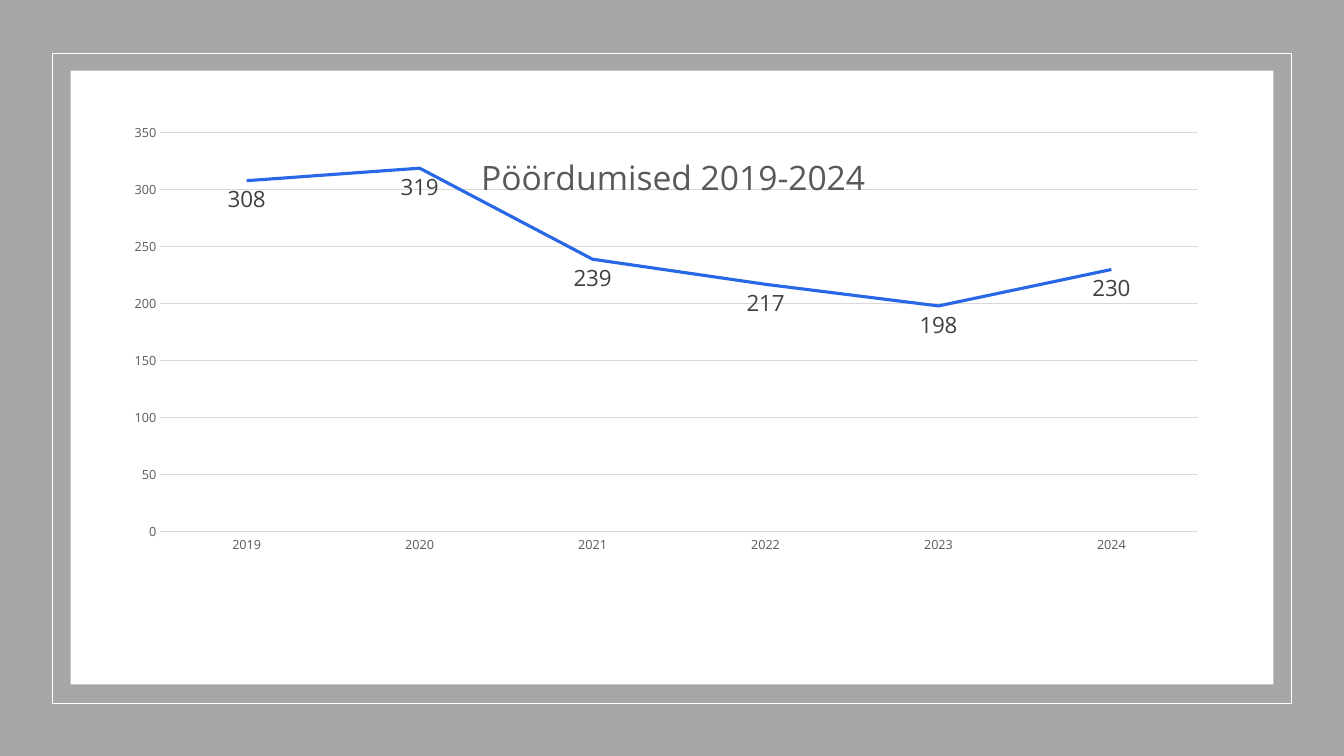
from lxml.etree import SubElement
from pptx import Presentation
from pptx.chart.data import CategoryChartData
from pptx.dml.color import RGBColor
from pptx.enum.chart import XL_CHART_TYPE as ChartType
from pptx.enum.chart import XL_LABEL_POSITION as LabelPosition
from pptx.enum.chart import XL_MARKER_STYLE as MarkerStyle
from pptx.enum.chart import XL_TICK_MARK as TickMark
from pptx.enum.shapes import MSO_SHAPE as Shape
from pptx.oxml.ns import qn
from pptx.util import Inches, Pt

WHITE = RGBColor(0xFF, 0xFF, 0xFF)
BACKDROP_GRAY = RGBColor(0xA6, 0xA6, 0xA6)
GRID_GRAY = RGBColor(0xD9, 0xD9, 0xD9)
TEXT_GRAY = RGBColor(0x59, 0x59, 0x59)
LABEL_GRAY = RGBColor(0x40, 0x40, 0x40)
TREND_BLUE = RGBColor(0x28, 0x68, 0xE6)
FONT_NAME = "Open Sans"

REQUESTS = {"2019": 308, "2020": 319, "2021": 239, "2022": 217, "2023": 198, "2024": 230}


def style_font(font, size, color):
    """Set the typeface, size and colour of a font."""
    font.name = FONT_NAME
    font.size = Pt(size)
    font.bold = False
    font.color.rgb = color


def style_line(line, color, width):
    """Give a line its colour and width in points."""
    line.color.rgb = color
    line.width = Pt(width)


def add_panel(page, left, top, width, height, fill=None, outline=None):
    """Add a rectangle with an optional fill and outline."""
    panel = page.shapes.add_shape(
        Shape.RECTANGLE, Inches(left), Inches(top), Inches(width), Inches(height)
    )
    panel.shadow.inherit = False
    if fill is None:
        panel.fill.background()
    else:
        panel.fill.solid()
        panel.fill.fore_color.rgb = fill
    if outline is None:
        panel.line.fill.background()
    else:
        style_line(panel.line, outline, 1)


def place(layout, **settings):
    """Fill a chart layout element with manual settings."""
    manual = SubElement(layout, qn("c:manualLayout"))
    for name, value in settings.items():
        SubElement(manual, qn(f"c:{name}")).set("val", str(value))


def style_title(chart, text):
    """Write the chart title over the plot."""
    title = chart.chart_title
    para = title.text_frame.paragraphs[0]
    para.text = text
    style_font(para.runs[0].font, 24, TEXT_GRAY)
    element = title.element
    overlay = element.get_or_add_overlay() if hasattr(element, "get_or_add_overlay") else element.find(qn("c:overlay"))
    overlay.set("val", "1")
    layout = element.find(qn("c:layout"))
    if layout is None:
        layout = SubElement(element, qn("c:layout"))
        overlay.addprevious(layout)
    place(layout, xMode="edge", yMode="edge", x=0.32, y=0.04)


def style_axes(chart):
    """Format the year axis, the count axis and the gridlines."""
    years, counts = chart.category_axis, chart.value_axis
    for axis in (years, counts):
        axis.major_tick_mark = axis.minor_tick_mark = TickMark.NONE
        style_font(axis.tick_labels.font, 9, TEXT_GRAY)
    style_line(years.format.line, GRID_GRAY, 0.75)
    counts.format.line.fill.background()
    counts.minimum_scale, counts.maximum_scale, counts.major_unit = 0, 350, 50
    style_line(counts.major_gridlines.format.line, GRID_GRAY, 0.75)


def style_series(series):
    """Format the trend line and its value labels."""
    series.smooth = False
    series.marker.style = MarkerStyle.NONE
    style_line(series.format.line, TREND_BLUE, 2.25)
    labels = series.data_labels
    labels.show_value = True
    labels.position = LabelPosition.BELOW
    style_font(labels.font, 16, LABEL_GRAY)


def add_request_chart(page):
    """Add the line chart of yearly requests."""
    data = CategoryChartData()
    data.categories = list(REQUESTS)
    data.add_series("Series 1", list(REQUESTS.values()))
    chart = page.shapes.add_chart(
        ChartType.LINE_STACKED, Inches(1.23), Inches(1.23), Inches(10.88), Inches(5.04), data
    ).chart
    style_font(chart.font, 10, TEXT_GRAY)
    chart.has_legend = False
    plot = chart.plots[0]
    plot.vary_by_categories = False
    style_title(chart, "Pöördumised 2019-2024")
    style_axes(chart)
    style_series(plot.series[0])
    plot_area = chart.element.find(".//" + qn("c:plotArea"))
    layout = plot_area.find(qn("c:layout"))
    if layout is None:
        layout = SubElement(plot_area, qn("c:layout"))
        plot_area.insert(0, layout)
    place(layout, layoutTarget="inner", xMode="edge", yMode="edge", x=0.033, y=0.017, w=0.946, h=0.785)


def main():
    """Build the slide and save the deck."""
    deck = Presentation()
    deck.slide_width, deck.slide_height = Inches(13.33), Inches(7.5)
    page = deck.slides.add_slide(deck.slide_layouts[6])
    add_panel(page, 0, 0, 13.33, 7.5, fill=BACKDROP_GRAY)
    add_panel(page, 0.52, 0.53, 12.29, 6.45, outline=WHITE)
    add_panel(page, 0.7, 0.7, 11.93, 6.09, fill=WHITE)
    add_request_chart(page)
    deck.save("out.pptx")


if __name__ == "__main__":
    main()
